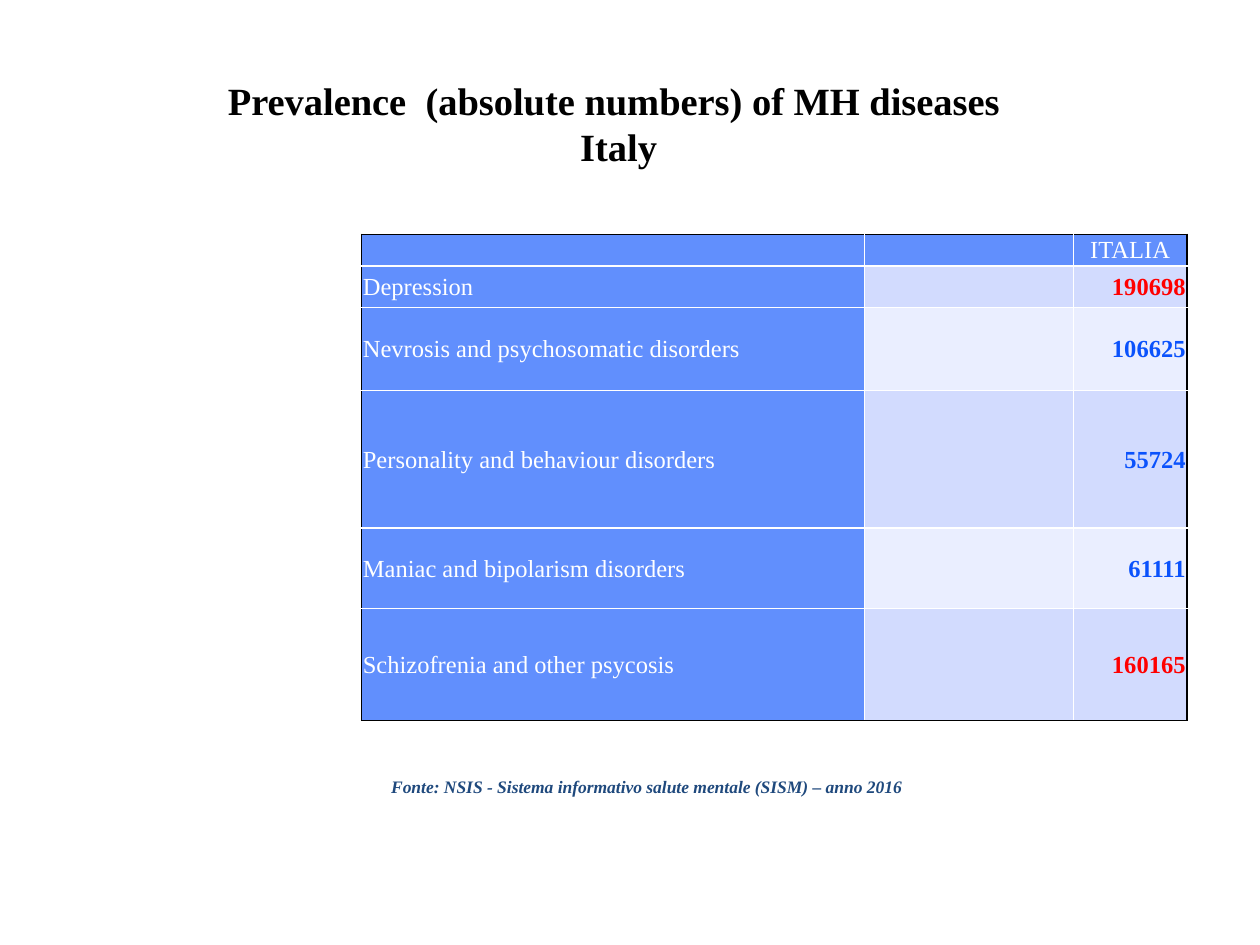
from lxml import etree
from pptx import Presentation
from pptx.dml.color import RGBColor
from pptx.enum import text as t
from pptx.oxml import ns
from pptx.util import Inches, Pt

FONT = "Times New Roman"
BLACK = RGBColor(0, 0, 0)
WHITE = RGBColor(0xFF, 0xFF, 0xFF)
NAVY = RGBColor(0x1F, 0x49, 0x7D)
BLUE = RGBColor(0x61, 0x8F, 0xFD)
BANDS = RGBColor(0xD2, 0xDB, 0xFE), RGBColor(0xEA, 0xEE, 0xFF)
RED = RGBColor(0xFF, 0, 0)
INK = RGBColor(0x0B, 0x52, 0xFC)
LEFT, MID, RIGHT = t.PP_ALIGN.LEFT, t.PP_ALIGN.CENTER, t.PP_ALIGN.RIGHT

COLS = 3.99, 1.66, 0.9
ROWS = 0.25, 0.33, 0.66, 1.09, 0.64, 0.89
DATA = [
    ("Depression", "190698", RED),
    ("Nevrosis and psychosomatic disorders", "106625", INK),
    ("Personality and behaviour disorders", "55724", INK),
    ("Maniac and bipolarism disorders", "61111", INK),
    ("Schizofrenia and other psycosis", "160165", RED),
]


def style(frame, words, size, color, align, bold=False, italic=False):
    frame.text = words
    para = frame.paragraphs[0]
    para.alignment = align
    for run in para.runs:
        font = run.font
        font.name, font.size = FONT, Pt(size)
        font.bold, font.italic = bold, italic
        font.color.rgb = color
    return para


def add_title(slide):
    title = slide.shapes.title
    title.left, title.top = Inches(1.54), Inches(0.56)
    title.width, title.height = Inches(6.74), Inches(0.84)
    frame = title.text_frame
    frame.word_wrap = True
    frame.auto_size = t.MSO_AUTO_SIZE.NONE
    frame.vertical_anchor = t.MSO_ANCHOR.MIDDLE
    style(frame, "Prevalence  (absolute numbers) of MH diseases  Italy",
          22, BLACK, MID, bold=True)


def add_source(slide):
    box = slide.shapes.add_textbox(
        Inches(2.98), Inches(6.11), Inches(4.3), Inches(0.27))
    frame = box.text_frame
    frame.word_wrap = False
    frame.auto_size = t.MSO_AUTO_SIZE.SHAPE_TO_FIT_TEXT
    para = style(
        frame,
        "Fonte: NSIS - Sistema informativo salute mentale (SISM) – anno 2016",
        10, NAVY, MID, bold=True, italic=True)
    para.space_after = Pt(10)


def add_edge(cell, side, color):
    props = cell._tc.get_or_add_tcPr()
    line = etree.SubElement(props, ns.qn("a:ln" + side), w=str(Pt(1)))
    fill = etree.SubElement(line, ns.qn("a:solidFill"))
    etree.SubElement(fill, ns.qn("a:srgbClr"), val=str(color))


def fill_cell(cell, words, fill, color, align, bold, outer):
    """Style one cell; outer holds the sides on the table's rim."""
    cell.margin_left = cell.margin_right = cell.margin_top = Inches(0.01)
    cell.margin_bottom = 0
    cell.vertical_anchor = t.MSO_ANCHOR.MIDDLE
    para = style(cell.text_frame, words, 14, color, align, bold)
    if not words:
        etree.SubElement(para._p, ns.qn("a:endParaRPr"), sz="1400")
    for side in "LRTB":
        add_edge(cell, side, BLACK if side in outer else WHITE)
    cell.fill.solid()
    cell.fill.fore_color.rgb = fill


def add_grid(slide):
    grid = slide.shapes.add_table(
        len(ROWS), len(COLS), Inches(2.87), Inches(1.86),
        Inches(sum(COLS)), Inches(sum(ROWS))).table
    for col, width in zip(grid.columns, COLS):
        col.width = Inches(width)
    for row, height in zip(grid.rows, ROWS):
        row.height = Inches(height)
    for r, (name, count, ink) in enumerate([("", "ITALIA", WHITE)] + DATA):
        band = BANDS[(r - 1) % 2] if r else BLUE
        rim = "T" if r == 0 else "B" if r == len(DATA) else ""
        fill_cell(grid.cell(r, 0), name, BLUE, WHITE, LEFT, False, rim + "L")
        fill_cell(grid.cell(r, 1), "", band, WHITE, LEFT, False, rim)
        fill_cell(grid.cell(r, 2), count, band, ink,
                  RIGHT if r else MID, r > 0, rim + "R")


def main():
    deck = Presentation()
    deck.slide_width, deck.slide_height = Inches(10), Inches(7.5)
    slide = deck.slides.add_slide(deck.slide_layouts[5])
    add_source(slide)
    add_title(slide)
    add_grid(slide)
    deck.save("out.pptx")


if __name__ == "__main__":
    main()
